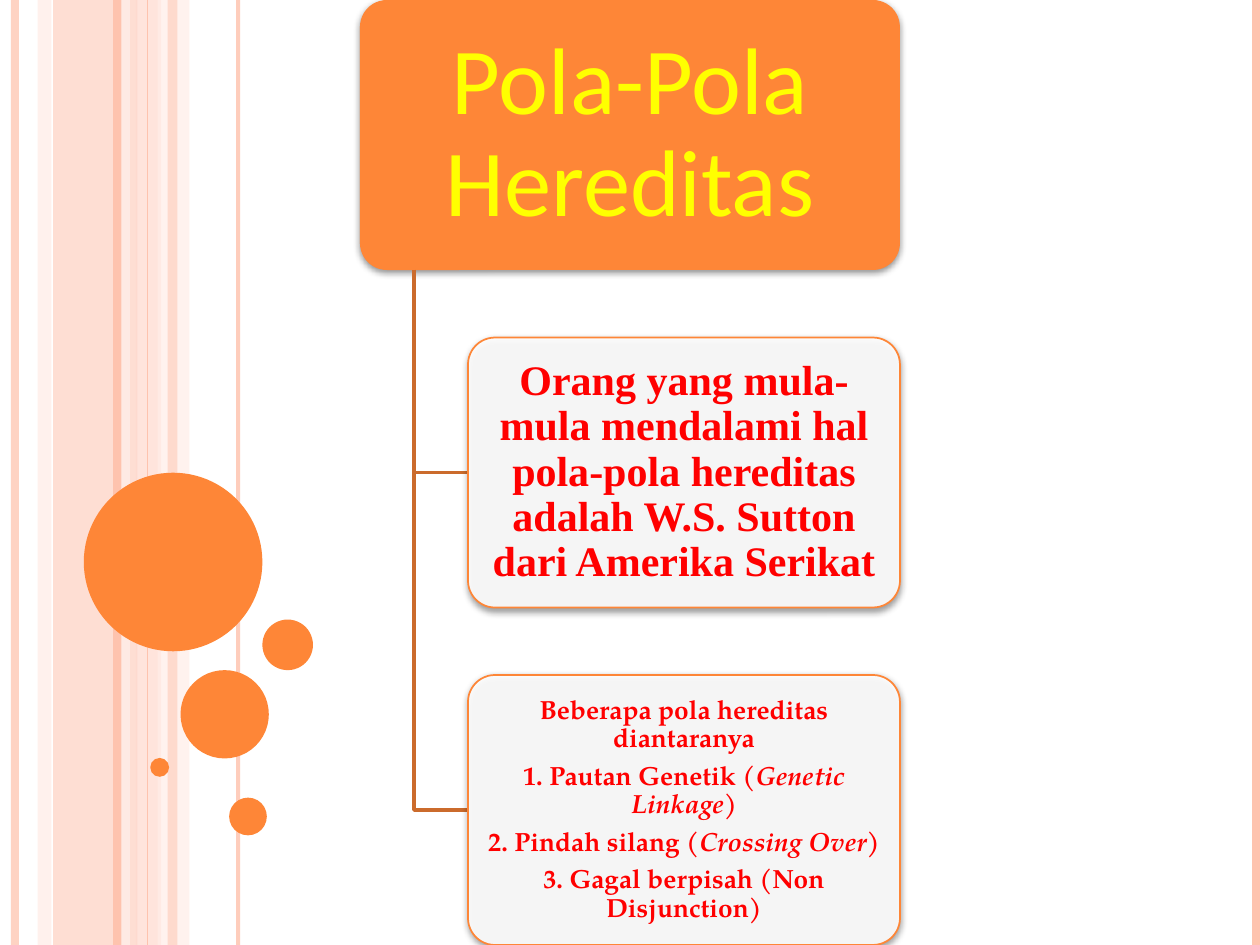
"""Build the slide on patterns of heredity: a title box with two branch cards."""
from lxml import etree
from pptx import Presentation
from pptx.dml.color import RGBColor
from pptx.enum.shapes import MSO_CONNECTOR as Connector, MSO_SHAPE as Shape
from pptx.enum.text import MSO_ANCHOR as Anchor, PP_ALIGN as Align
from pptx.oxml.ns import qn
from pptx.util import Cm, Pt

WIDTH, HEIGHT = 25.4, 19.05
ORANGE, BROWN, PEACH, PALE, FAINT = "FE8637", "CB6B2C", "FEC3AE", "FFD9CE", "FFEDE8"
YELLOW, RED, WHITE = "FFFF00", "FF0000", "FFFFFF"

BARS = [
    (1.07, 1.7, PEACH, 54),
    (0.76, 0.28, PALE, 36),
    (2.74, 0.51, PALE, 70),
    (3.18, 0.64, FAINT, 71),
    (3.38, 0.2, PEACH, 51),
]
STRIPES = [
    (0.3, 4.5, PEACH, 73),
    (2.54, 4.5, FAINT, 83),
    (2.36, 4.5, PEACH, 100),
    (4.8, 2.25, PEACH, 82),
    (2.97, 0.75, PEACH, 100),
    (25.32, 4.5, PEACH, 100),
]
CIRCLES = [
    (1.69, 9.53, 3.6),
    (3.64, 13.51, 1.78),
    (3.03, 15.28, 0.38),
    (4.62, 16.08, 0.76),
    (5.29, 12.49, 1.02),
]
TITLE = [["Pola-Pola Hereditas"]]
CARDS = [
    ([["Orang yang mula-mula mendalami hal pola-pola hereditas adalah "
       "W.S. Sutton dari Amerika Serikat"]], "Times New Roman", 24),
    ([["Beberapa pola hereditas diantaranya"],
      ["1. Pautan Genetik (", "Genetic Linkage", ")"],
      ["2. Pindah silang (", "Crossing Over", ")"],
      ["3. Gagal berpisah (Non Disjunction)"]], "TeX Gyre Pagella", 15),
]

BOX_HEIGHT = HEIGHT / 3.5
BOX_STEP = BOX_HEIGHT * 1.25
TITLE_WIDTH = BOX_HEIGHT * 2
TITLE_LEFT = (WIDTH - TITLE_WIDTH) / 2
TRUNK_X = TITLE_LEFT + TITLE_WIDTH * 0.1
CARD_LEFT = TITLE_LEFT + TITLE_WIDTH * 0.2
CARD_WIDTH = TITLE_WIDTH * 0.8


def paint(color_format, color, opacity=100):
    color_format.fore_color.rgb = RGBColor.from_string(color)
    if opacity < 100:
        for node in color_format.fore_color._xFill.iter(qn("a:srgbClr")):
            etree.SubElement(node, qn("a:alpha"), val=str(opacity * 1000))


def add_filled(slide, kind, left, top, width, height, color, opacity=100):
    shape = slide.shapes.add_shape(kind, Cm(left), Cm(top), Cm(width), Cm(height))
    shape.shadow.inherit = False
    shape.fill.solid()
    paint(shape.fill, color, opacity)
    shape.line.fill.background()
    return shape


def add_stripe(slide, x, weight, color, opacity):
    stripe = slide.shapes.add_connector(Connector.STRAIGHT, Cm(x), 0, Cm(x), Cm(HEIGHT))
    stripe.line.width = Pt(weight)
    stripe.line.fill.solid()
    paint(stripe.line.fill, color, opacity)
    etree.SubElement(stripe._element.spPr, qn("a:effectLst"))


def add_branch(slide, end_y):
    outline = slide.shapes.build_freeform(Cm(TRUNK_X), Cm(BOX_HEIGHT))
    outline.add_line_segments(
        [(Cm(TRUNK_X), Cm(end_y)), (Cm(CARD_LEFT), Cm(end_y))], close=False)
    branch = outline.convert_to_shape()
    branch.shadow.inherit = False
    branch.fill.background()
    branch.line.color.rgb = RGBColor.from_string(BROWN)
    branch.line.width = Pt(2)


def add_shadow(shape):
    effects = shape._element.spPr.find(qn("a:effectLst"))
    shadow = etree.SubElement(effects, qn("a:outerShdw"), blurRad=str(Pt(4)),
                              dist=str(Pt(1.6)), dir="5400000", rotWithShape="0")
    color = etree.SubElement(shadow, qn("a:srgbClr"), val="000000")
    etree.SubElement(color, qn("a:alpha"), val="42000")


def write(shape, lines, font, size, color, bold, inset):
    frame = shape.text_frame
    frame.word_wrap = True
    frame.vertical_anchor = Anchor.MIDDLE
    frame.margin_left = frame.margin_right = Cm(inset)
    frame.margin_top = frame.margin_bottom = 0
    for index, pieces in enumerate(lines):
        para = frame.add_paragraph() if index else frame.paragraphs[0]
        para.alignment = Align.CENTER
        para.line_spacing = 0.9
        if index < len(lines) - 1:
            para.space_after = Pt(size * 0.35)
        for position, piece in enumerate(pieces):
            span = para.add_run()
            span.text = piece
            span.font.name = font
            span.font.size = Pt(size)
            span.font.bold = bold
            span.font.italic = position == 1
            span.font.color.rgb = RGBColor.from_string(color)


def add_box(slide, left, top, width, fill, opacity=100):
    box = add_filled(slide, Shape.ROUNDED_RECTANGLE, left, top, width, BOX_HEIGHT,
                     fill, opacity)
    box.adjustments[0] = 0.1
    add_shadow(box)
    return box


def main():
    deck = Presentation()
    deck.slide_width, deck.slide_height = Cm(WIDTH), Cm(HEIGHT)
    page = deck.slides.add_slide(deck.slide_layouts[6])

    for left, width, color, opacity in BARS:
        add_filled(page, Shape.RECTANGLE, left, 0, width, HEIGHT, color, opacity)
    for stripe in STRIPES:
        add_stripe(page, *stripe)
    for left, top, size in CIRCLES:
        add_filled(page, Shape.OVAL, left, top, size, size, ORANGE)

    title = add_box(page, TITLE_LEFT, 0, TITLE_WIDTH, ORANGE)
    write(title, TITLE, "Calibri", 54, YELLOW, False, 0.12)

    for row, (lines, font, size) in enumerate(CARDS, start=1):
        top = row * BOX_STEP
        add_branch(page, top + BOX_HEIGHT / 2)
        card = add_box(page, CARD_LEFT, top, CARD_WIDTH, WHITE, 90)
        card.line.color.rgb = RGBColor.from_string(ORANGE)
        card.line.width = Pt(1)
        write(card, lines, font, size, RED, True, 0)

    deck.save("out.pptx")


if __name__ == "__main__":
    main()
